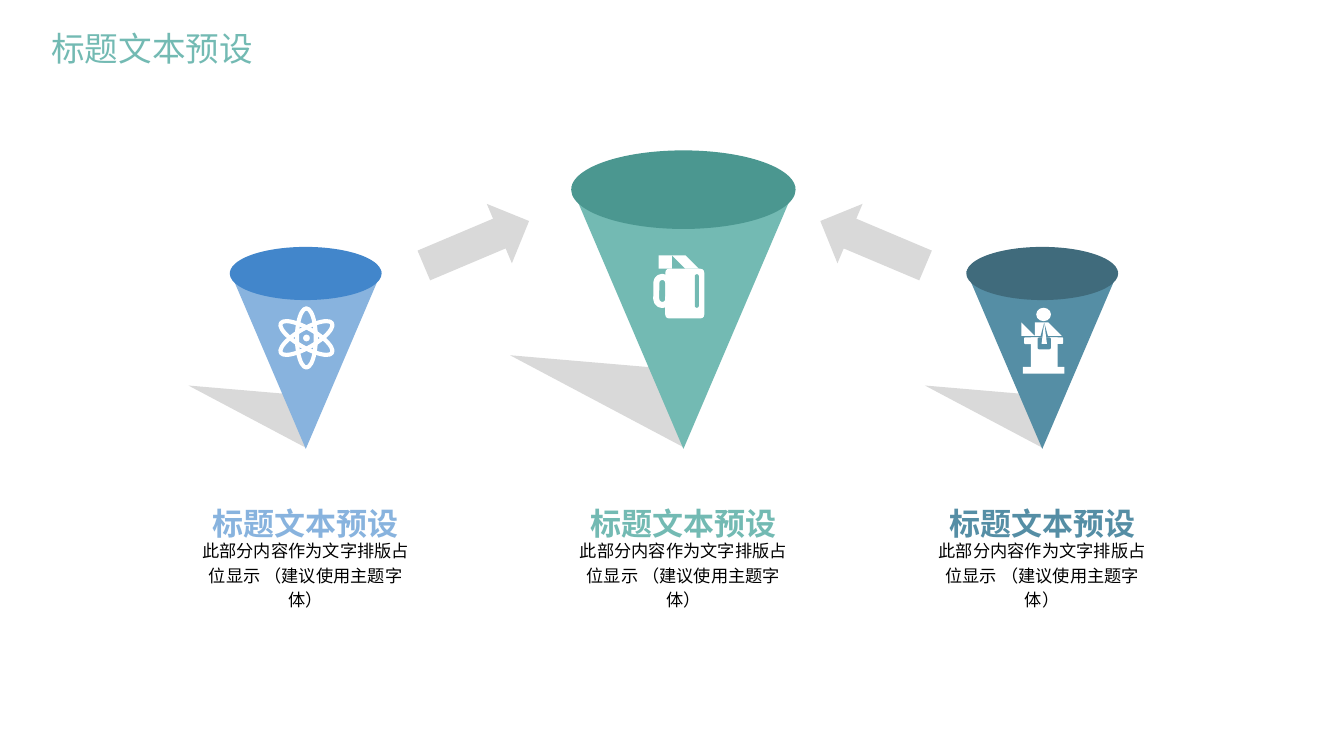
from pptx import Presentation
from pptx.dml.color import RGBColor as Color
from pptx.enum.shapes import MSO_SHAPE as Shape
from pptx.enum.text import MSO_ANCHOR as Anchor, PP_ALIGN as Align
from pptx.util import Inches, Pt

COLORS = {
    "white": "FFFFFF", "black": "000000", "grey": "D9D9D9",
    "blue": "88B3DE", "blue_rim": "4286CB",
    "green": "73BAB3", "green_rim": "4B9790",
    "teal": "558EA5", "teal_rim": "406B7C",
}
HEADING = "标题文本预设"
BODY = "此部分内容作为文字排版占位显示 （建议使用主题字体）"

deck = Presentation()
deck.slide_width = Inches(10)
deck.slide_height = deck.slide_width * 9 // 16
page = deck.slides.add_slide(deck.slide_layouts[6])
CELL = deck.slide_width / 100


def add_figure(outline, place, fill, rotation=0, line=0):
    if outline == "polygon":
        start, *rest = place
        builder = page.shapes.build_freeform(*start, scale=CELL)
        builder.add_line_segments(rest, close=True)
        figure = builder.convert_to_shape()
    else:
        figure = page.shapes.add_shape(outline, *[round(v * CELL) for v in place])
    figure.shadow.inherit = False
    figure.rotation = rotation
    color = Color.from_string(COLORS[fill])
    if line:
        figure.fill.background()
        figure.line.color.rgb = color
        figure.line.width = Pt(line)
    else:
        figure.fill.solid()
        figure.fill.fore_color.rgb = color
        figure.line.fill.background()
    return figure


def add_label(place, text, size, color, font, align, wrap=False, bold=None):
    box = page.shapes.add_textbox(*[round(v * CELL) for v in place])
    frame = box.text_frame
    frame.text = text
    frame.word_wrap = wrap
    para = frame.paragraphs[0]
    para.alignment = align
    span = para.runs[0].font
    span.size, span.name, span.bold = Pt(size), font, bold
    span.color.rgb = Color.from_string(COLORS[color])
    return frame


add_figure(Shape.RIGHT_ARROW, (31.2, 15.7, 8.5, 4.8), "grey", 337.1)
add_figure(Shape.LEFT_ARROW, (60.7, 15.7, 8.5, 4.8), "grey", 22.9)

APEX = 33.4
for center, width, color in [(22.75, 11.3, "blue"), (77.55, 11.3, "teal"), (50.85, 16.7, "green")]:
    left = center - width / 2
    shadow = add_figure(
        Shape.ISOSCELES_TRIANGLE,
        (center - 0.51 * width, APEX - 0.78 * width, 0.36 * width, 0.87 * width),
        "grey", 293.2)
    shadow.adjustments[0] = 0.2
    height = 1.17 * width
    add_figure(Shape.ISOSCELES_TRIANGLE, (left, APEX - height, width, height), color, 180)
    add_figure(Shape.OVAL, (left, APEX - 1.33 * width, width, 0.35 * width), color + "_rim")
    body = add_label((center - 8.3, 40.1, 16.6, 5.1), BODY, 9.2, "black", "Calibri", Align.CENTER, True)
    body.paragraphs[0].line_spacing = 1.2
    heading = add_label((center - 8.3, 37.6, 16.6, 2.7), HEADING, 16.6, color, "Calibri", Align.CENTER, bold=True)
    for frame in (body, heading):
        frame.vertical_anchor = Anchor.MIDDLE
        frame.margin_left = frame.margin_right = frame.margin_top = frame.margin_bottom = 0

for angle in (0, 60, 120):
    add_figure(Shape.OVAL, (22.1, 22.95, 1.4, 4.4), "white", angle, line=2.2)
add_figure(Shape.OVAL, (22.55, 24.9, 0.5, 0.5), "white")

podium_parts = [
    (Shape.OVAL, (77.1, 22.9, 1.1, 1), "white"),
    ("polygon", [(77.5, 24), (78, 24), (78.3, 24.2), (78.6, 24.7), (78.7, 25.1), (77.2, 25.1),
                 (77.2, 24.6), (76.8, 25), (76.4, 24.9), (76.1, 24.7), (76.05, 24.5),
                 (76.4, 24.4), (76.7, 24.6), (76.9, 24.4), (77.2, 24.1)], "white"),
    (Shape.ROUNDED_RECTANGLE, (76.2, 25.1, 2.9, 0.5), "white"),
    (Shape.RECTANGLE, (76.7, 25.1, 2, 2.3), "white"),
    (Shape.RECTANGLE, (76.1, 27.3, 3.1, 0.5), "white"),
    (Shape.ROUNDED_RECTANGLE, (77.2, 25.1, 1, 0.9), "teal"),
    (Shape.ISOSCELES_TRIANGLE, (77.4, 24, 0.6, 1.1), "teal"),
    (Shape.ISOSCELES_TRIANGLE, (77.5, 24, 0.4, 1.6), "white"),
]
for part in podium_parts:
    add_figure(*part)

handle = add_figure(Shape.ROUNDED_RECTANGLE, (48.83, 20.6, 0.9, 2.1), "white", line=3.2)
handle.adjustments[0] = 0.5
mug = add_figure(Shape.ROUNDED_RECTANGLE, (49.5, 20, 2.9, 3.7), "white")
mug.adjustments[0] = 0.1
slot = add_figure(Shape.ROUNDED_RECTANGLE, (51.7, 20.4, 0.3, 2.5), "green")
slot.adjustments[0] = 0.5
STEAM = [(48.8, 18.9), (49.05, 19.05), (49.5, 19.15), (50, 19.3), (50.2, 19.5),
         (50.3, 19.8), (49.9, 19.7), (49.4, 19.55), (49, 19.3)]
for shift in (0, 1.45):
    add_figure("polygon", [(x + shift, y) for x, y in STEAM], "white")

add_label((-0.4, 1.6, 20.2, 5.3), HEADING, 18, "green", "Noto Sans CJK SC", Align.RIGHT)

deck.save("out.pptx")
